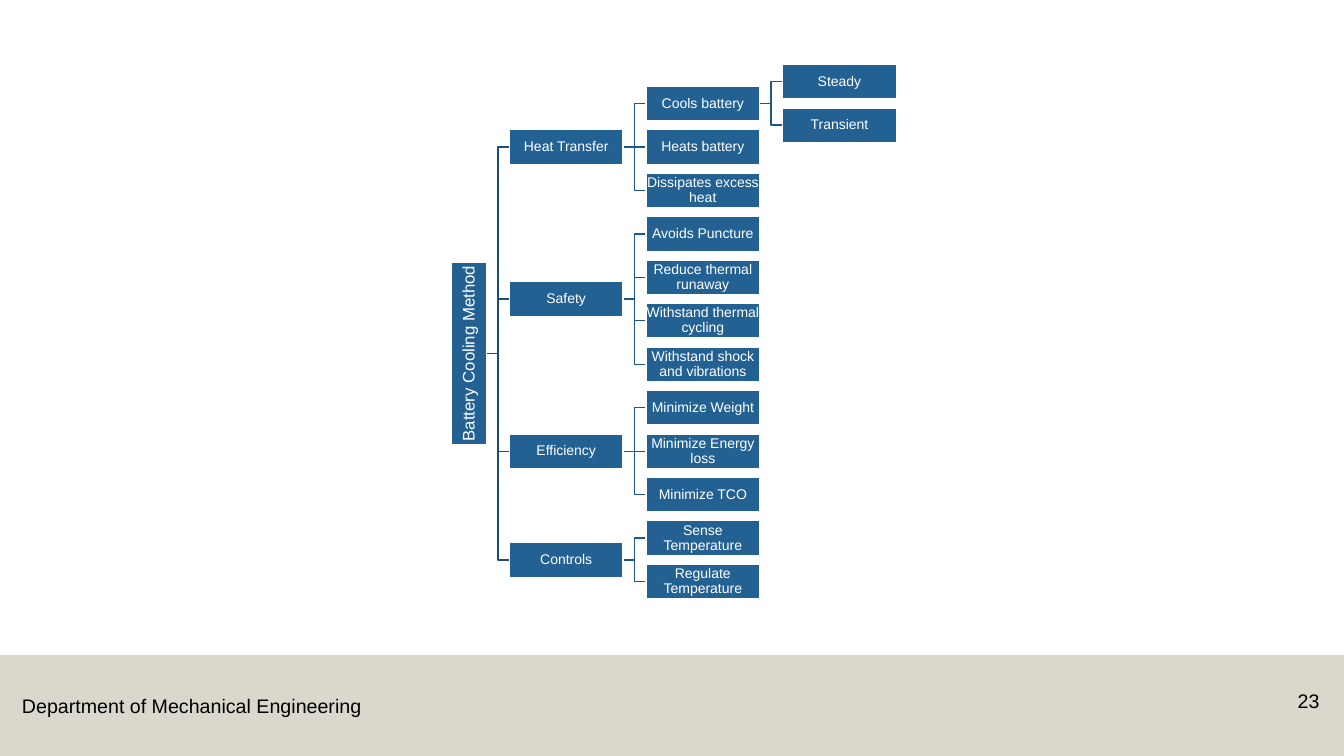
import pptx
import pptx.util
import pptx.dml.color
import pptx.enum.shapes
import pptx.enum.text
import pptx.oxml
import pptx.oxml.ns
import lxml.etree

Pt = pptx.util.Pt
RGB = pptx.dml.color.RGBColor
Align = pptx.enum.text.PP_ALIGN
Anchor = pptx.enum.text.MSO_ANCHOR
Fit = pptx.enum.text.MSO_AUTO_SIZE
qn = pptx.oxml.ns.qn

BLUE = RGB(0x23, 0x61, 0x92)
NAVY = RGB(0x1C, 0x4E, 0x75)
STEEL = RGB(0x20, 0x58, 0x85)
SAND = RGB(0xB7, 0xB0, 0x9C)
WHITE = RGB(0xFF, 0xFF, 0xFF)
BLACK = RGB(0, 0, 0)

# Tree grid, in points
LEFT, TOP = 363.8, 73.9      # first column edge, centre of row 0
STEP, PITCH = 97.6, 31.05    # column and row steps
WIDE, HIGH = 81.3, 24.8      # node size
ROOT = 130.5                 # length of the upright root node

TREE = {
    "Heat Transfer": ["Cools battery", "Heats battery",
                      "Dissipates excess heat"],
    "Safety": ["Avoids Puncture", "Reduce thermal runaway",
               "Withstand thermal cycling", "Withstand shock and vibrations"],
    "Efficiency": ["Minimize Weight", "Minimize Energy loss", "Minimize TCO"],
    "Controls": ["Sense Temperature", "Regulate Temperature"],
}
STATES = ["Steady", "Transient"]  # kinds of "Cools battery"


class Deck:
    """Holds the style and the current slide."""

    def __init__(self, show):
        self.slide = show.slides.add_slide(show.slide_layouts[6])
        self.shapes = self.slide.shapes
        self.face = "Arial"

    def text(self, shape, words, size, color, align, frame):
        body = shape.text_frame
        for key, val in frame.items():
            setattr(body, key, val)
        par = body.paragraphs[0]
        par.alignment = align
        run = par.add_run()
        run.text = words
        for key, val in {"name": self.face, "size": Pt(size)}.items():
            setattr(run.font, key, val)
        run.font.color.rgb = color
        return par

    def rect(self, x, y, w, h, fill):
        box = self.shapes.add_shape(
            pptx.enum.shapes.MSO_SHAPE.RECTANGLE, Pt(x), Pt(y), Pt(w), Pt(h))
        box.shadow.inherit = False
        box.fill.solid()
        box.fill.fore_color.rgb = fill
        box.line.fill.background()
        return box

    def band(self, x, y, w, h, fill, alpha):
        box = self.rect(x, y, w, h, fill)
        color = box._element.spPr.find(qn("a:solidFill") + "/" + qn("a:srgbClr"))
        lxml.etree.SubElement(color, qn("a:alpha"), val=str(alpha * 1000))

    def label(self, x, y, w, h, words, align, **frame):
        box = self.shapes.add_textbox(Pt(x), Pt(y), Pt(w), Pt(h))
        self.text(box, words, 14, BLACK, align, frame)

    def node(self, mid, y, w, words, size=10, turn=0):
        box = self.rect(mid - w / 2, y - HIGH / 2, w, HIGH, BLUE)
        box.rotation = turn
        box.line.color.rgb = WHITE
        box.line.width = Pt(1)
        edge = Pt(0.5)
        par = self.text(box, words, size, WHITE, Align.CENTER, {
            "word_wrap": True, "vertical_anchor": Anchor.MIDDLE,
            "margin_left": edge, "margin_right": edge,
            "margin_top": edge, "margin_bottom": edge})
        par.line_spacing = 0.9

    def link(self, x, start, end, color):
        """Joins a parent's right edge to a child one gap further on."""
        far = x + STEP - WIDE
        mid = (x + far) / 2
        if start == end:
            line = self.shapes.add_connector(
                pptx.enum.shapes.MSO_CONNECTOR.STRAIGHT,
                Pt(x), Pt(start), Pt(far), Pt(end))
            lxml.etree.SubElement(line._element.spPr, qn("a:effectLst"))
        else:
            pen = self.shapes.build_freeform(Pt(x), Pt(start))
            pen.add_line_segments(
                [(Pt(mid), Pt(start)), (Pt(mid), Pt(end)), (Pt(far), Pt(end))],
                close=False)
            line = pen.convert_to_shape()
            line.shadow.inherit = False
            line.fill.background()
        line.line.color.rgb = color
        line.line.width = Pt(1)


def row_y(row):
    return TOP + row * PITCH


def plan():
    """Lists nodes as (level, row, words) and links as (level, row, row)."""
    nodes, links, row = [], [], 0
    for group, items in TREE.items():
        mid = row + (len(items) - 1) / 2
        nodes.append((0, mid, group))
        for item in items:
            nodes.append((1, row, item))
            links.append((0, mid, row))
            row += 1
    for spot, state in zip((-0.5, 0.5), STATES):
        nodes.append((2, spot, state))
        links.append((1, 0, spot))
    tops = [spot for level, spot, words in nodes if level == 0]
    root = (tops[0] + tops[-1]) / 2
    links += [(-1, root, spot) for spot in tops]
    return nodes, links, root


def main():
    show = pptx.Presentation()
    show.slide_width, show.slide_height = Pt(960), Pt(540)
    deck = Deck(show)

    # Footer
    deck.band(0, 468, 960, 72, SAND, 50)
    deck.label(8.6, 491.8, 258.5, 24.2, "Department of Mechanical Engineering",
               Align.LEFT, word_wrap=False, auto_size=Fit.SHAPE_TO_FIT_TEXT)
    deck.label(894.2, 488.9, 55.4, 28.8, "23", Align.RIGHT, word_wrap=True)

    # Links behind the nodes
    nodes, links, root = plan()
    for level, start, end in links:
        deck.link(LEFT + level * STEP + WIDE, row_y(start), row_y(end),
                  NAVY if level < 0 else STEEL)

    # Nodes
    edge = LEFT - STEP + WIDE
    deck.node(edge - HIGH / 2, row_y(root), ROOT,
              "Battery Cooling Method", 12, 270)
    for level, row, words in nodes:
        deck.node(LEFT + level * STEP + WIDE / 2, row_y(row), WIDE, words)

    show.save("out.pptx")


if __name__ == "__main__":
    main()
